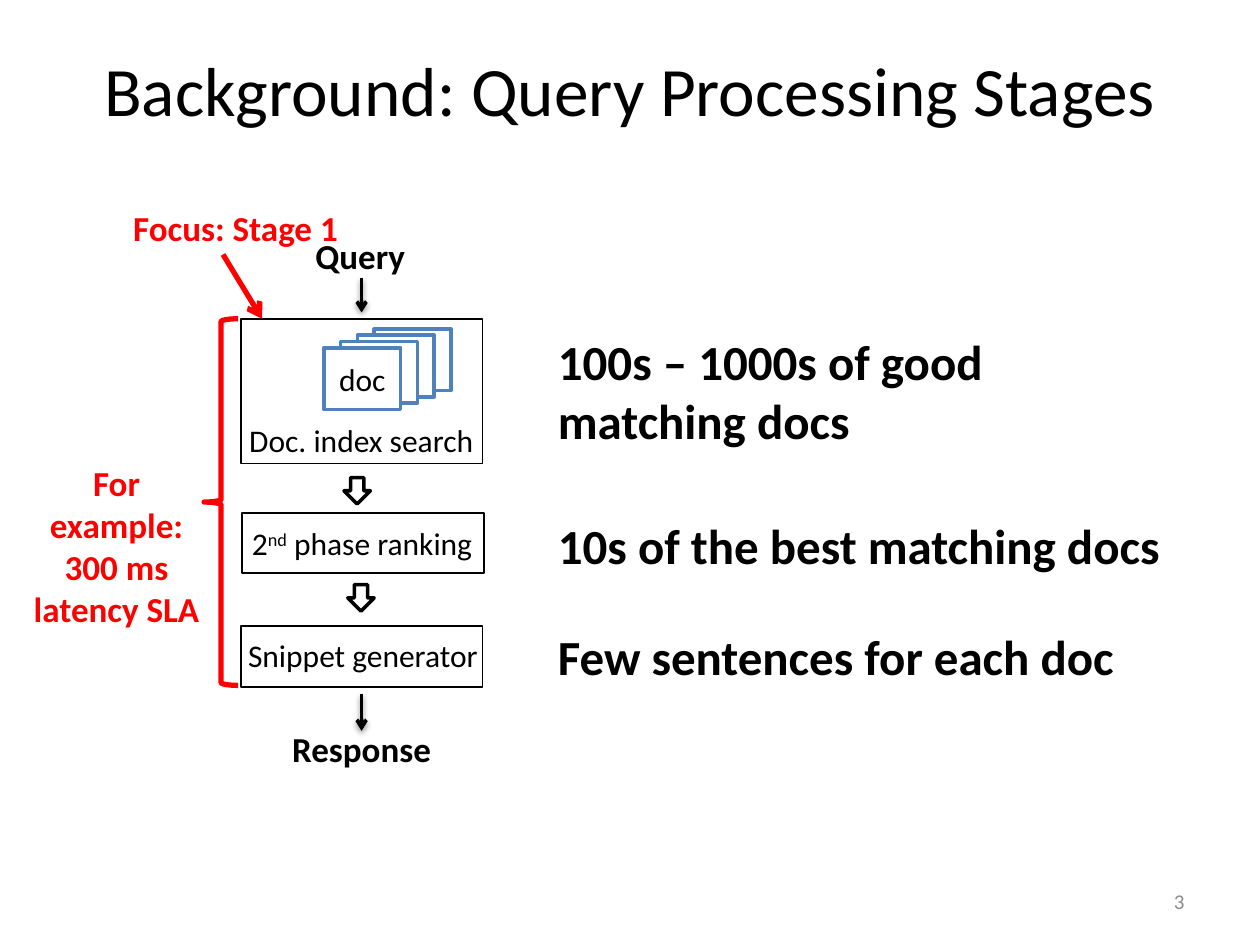
from dataclasses import dataclass

from lxml import etree
from pptx import Presentation
from pptx.dml.color import RGBColor
from pptx.enum.shapes import MSO_CONNECTOR, MSO_SHAPE
from pptx.enum.text import MSO_ANCHOR, PP_ALIGN
from pptx.oxml.ns import qn
from pptx.util import Inches, Pt

BLACK, WHITE, RED, BLUE, GREY = "000000", "FFFFFF", "FF0000", "4F81BD", "8C8C8C"
STAGE_WIDTH, STAGE_HEIGHT = 1.92, 0.48


@dataclass
class Box:
    left: float
    top: float
    width: float
    height: float

    def inner(self, left, top, width, height):
        """Return a box placed relative to this one's top left corner."""
        return Box(self.left + left, self.top + top, width, height)

    def lengths(self):
        return [Inches(v) for v in (self.left, self.top, self.width, self.height)]


def color(value):
    return RGBColor.from_string(value)


def write(shape, text, size=18, tint=BLACK, bold=False, align=PP_ALIGN.LEFT,
          anchor=MSO_ANCHOR.TOP, wrap=True):
    """Each item of text is a paragraph; parts between ^ marks are raised."""
    frame = shape.text_frame
    frame.word_wrap = wrap
    frame.vertical_anchor = anchor
    for index, content in enumerate(text):
        para = frame.paragraphs[0] if index == 0 else frame.add_paragraph()
        para.alignment = align
        for row, line in enumerate(content.split("\n")):
            if row:
                para.add_line_break()
            for part, words in enumerate(line.split("^")):
                span = para.add_run()
                span.text = words
                span.font.name = "Calibri"
                span.font.size = Pt(size)
                span.font.bold = bold
                span.font.color.rgb = color(tint)
                if part % 2:
                    span.font._element.set("baseline", "30000")


def add_text(page, box, *text, **style):
    shape = page.shapes.add_textbox(*box.lengths())
    write(shape, text, **style)


def add_outline(page, kind, box, line=BLACK, weight=1, fill=None):
    shape = page.shapes.add_shape(kind, *box.lengths())
    shape.shadow.inherit = False
    if fill:
        shape.fill.solid()
        shape.fill.fore_color.rgb = color(fill)
    else:
        shape.fill.background()
    shape.line.color.rgb = color(line)
    shape.line.width = Pt(weight)
    return shape


def add_arrow(page, box, tint=BLACK, weight=2, shadow=False):
    """Draw an arrow from the box's top left to its bottom right corner."""
    arrow = page.shapes.add_connector(
        MSO_CONNECTOR.STRAIGHT, Inches(box.left), Inches(box.top),
        Inches(box.left + box.width), Inches(box.top + box.height))
    arrow.line.color.rgb = color(tint)
    arrow.line.width = Pt(weight)
    etree.SubElement(arrow.line._get_or_add_ln(), qn("a:tailEnd"), type="arrow")
    effects = etree.SubElement(arrow._element.spPr, qn("a:effectLst"))
    if shadow:
        outer = etree.SubElement(effects, qn("a:outerShdw"), blurRad="40000",
                                 dist="20000", dir="5400000", rotWithShape="0")
        shade = etree.SubElement(outer, qn("a:srgbClr"), val=BLACK)
        etree.SubElement(shade, qn("a:alpha"), val="38000")


def add_frame_text(page, box):
    """Title and page number."""
    add_text(page, box.inner(0.5, 0.08, 9, 1.25),
             "Background: Query Processing Stages", size=39.6,
             align=PP_ALIGN.CENTER, anchor=MSO_ANCHOR.MIDDLE)
    add_text(page, box.inner(7.17, 6.95, 2.33, 0.4), "3", size=12, tint=GREY,
             align=PP_ALIGN.RIGHT, anchor=MSO_ANCHOR.MIDDLE)


def add_doc_stack(page, box, count=4):
    """Overlapping documents, the front one at the lower left."""
    width, height = 0.61, 0.49
    step_x = (box.width - width) / (count - 1)
    step_y = (box.height - height) / (count - 1)
    for index in range(count):
        place = box.inner(step_x * (count - 1 - index), step_y * index, width, height)
        doc = add_outline(page, MSO_SHAPE.RECTANGLE, place, BLUE, 2, WHITE)
    write(doc, ["doc"], align=PP_ALIGN.CENTER, anchor=MSO_ANCHOR.MIDDLE, wrap=False)


def add_pipeline(page, box):
    """Query, three stages and response, from top to bottom."""
    stages = [
        # label, label left, label top, label width, stage left, top, height
        ("Doc. index search", -0.03, 0.76, 2, 0, 0, 1.15),
        ("2^nd^ phase ranking", -0.01, 1.58, 1.99, 0.01, 1.54, STAGE_HEIGHT),
        ("Snippet generator", -0.04, 2.47, 2.05, 0, 2.44, STAGE_HEIGHT),
    ]
    for label, text_left, text_top, text_width, left, top, height in stages:
        add_outline(page, MSO_SHAPE.RECTANGLE, box.inner(left, top, STAGE_WIDTH, height))
        add_text(page, box.inner(text_left, text_top, text_width, 0.4), label, wrap=False)
    add_doc_stack(page, box.inner(0.66, 0.08, 1.01, 0.64))

    # Block arrows between the stages
    for left, top in ((0.82, 1.26), (0.85, 2.11)):
        add_outline(page, MSO_SHAPE.DOWN_ARROW, box.inner(left, top, 0.21, 0.21), weight=2)

    # Input and output
    for label, left, top, width in (("Query", 0.47, -0.81, 0.96),
                                    ("Response", 0.29, 3.1, 1.34)):
        add_text(page, box.inner(left, top, width, 0.62), label, size=20, bold=True,
                 align=PP_ALIGN.CENTER, anchor=MSO_ANCHOR.MIDDLE, wrap=False)
    for top, length in ((-0.32, 0.27), (2.98, 0.29)):
        add_arrow(page, box.inner(STAGE_WIDTH / 2, top, 0, length), shadow=True)


def add_callouts(page, box):
    """Red remarks to the left of the pipeline."""
    style = dict(size=20, tint=RED, bold=True, align=PP_ALIGN.CENTER)
    add_outline(page, MSO_SHAPE.LEFT_BRACE, box.inner(1.54, 0.94, 0.27, 2.91), RED, 3)
    add_text(page, box.inner(0, 2.02, 1.69, 1.11),
             "For example:\n300 ms", "latency SLA", **style)
    add_text(page, box.inner(0.75, 0, 2.08, 0.44), "Focus: Stage 1", **style)
    add_arrow(page, box.inner(1.69, 0.43, 0.31, 0.51), RED, 3)


def add_results(page, box):
    """What each stage yields."""
    for text, top, width, height in (
            ("100s – 1000s of good matching docs", 0, 4.83, 1.04),
            ("10s of the best matching docs", 1.46, 5.33, 0.57),
            ("Few sentences for each doc", 2.34, 4.83, 0.57)):
        add_text(page, box.inner(0, top, width, height), text, size=28, bold=True)


def main():
    deck = Presentation()
    deck.slide_width, deck.slide_height = Inches(10), Inches(7.5)
    page = deck.slides.add_slide(deck.slide_layouts[6])
    add_frame_text(page, Box(0, 0, 10, 7.5))
    add_pipeline(page, Box(1.91, 2.53, STAGE_WIDTH, 2.92))
    add_callouts(page, Box(0.08, 1.59, 2.83, 3.85))
    add_results(page, Box(4.33, 2.58, 5.33, 2.91))
    deck.save("out.pptx")


if __name__ == "__main__":
    main()
